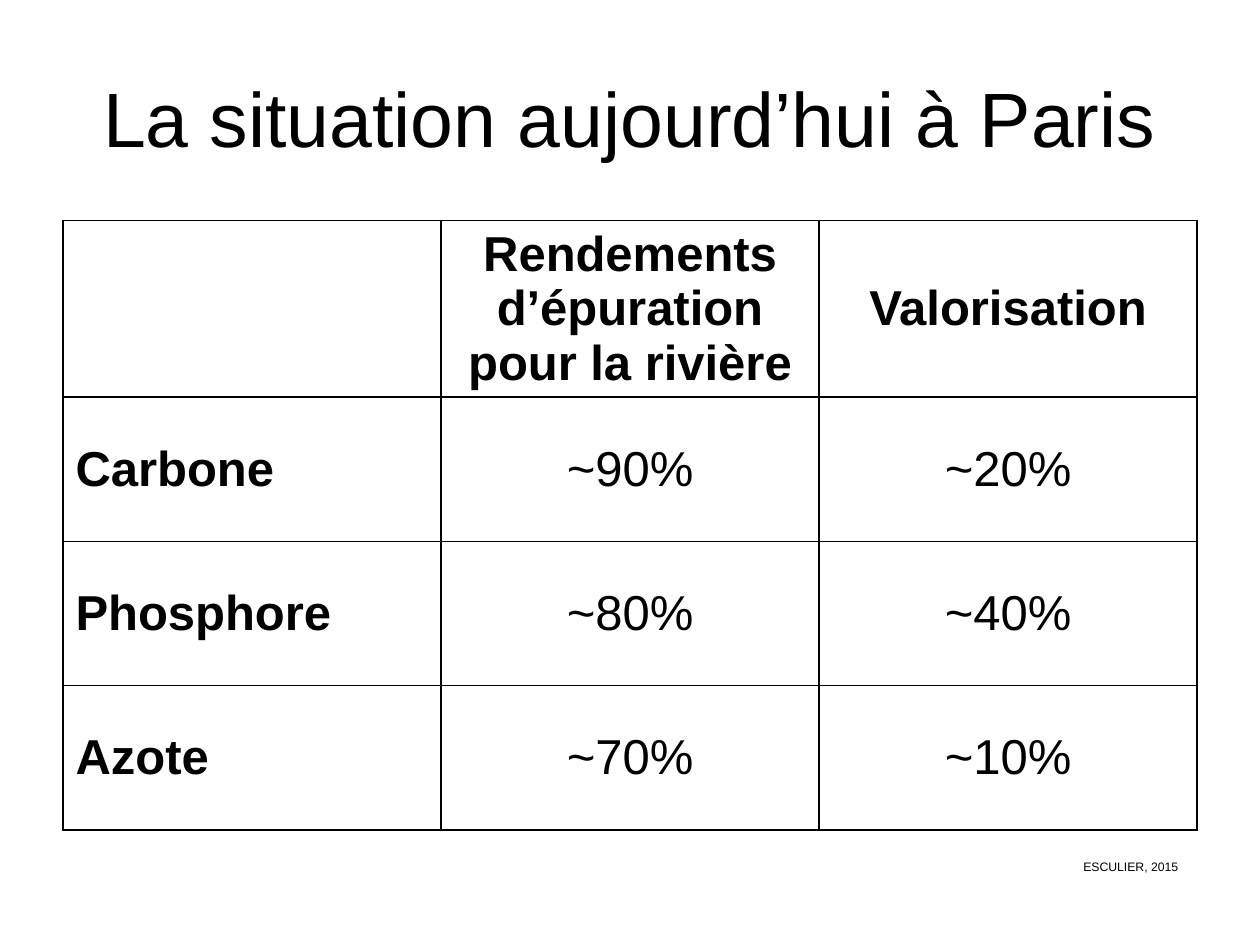
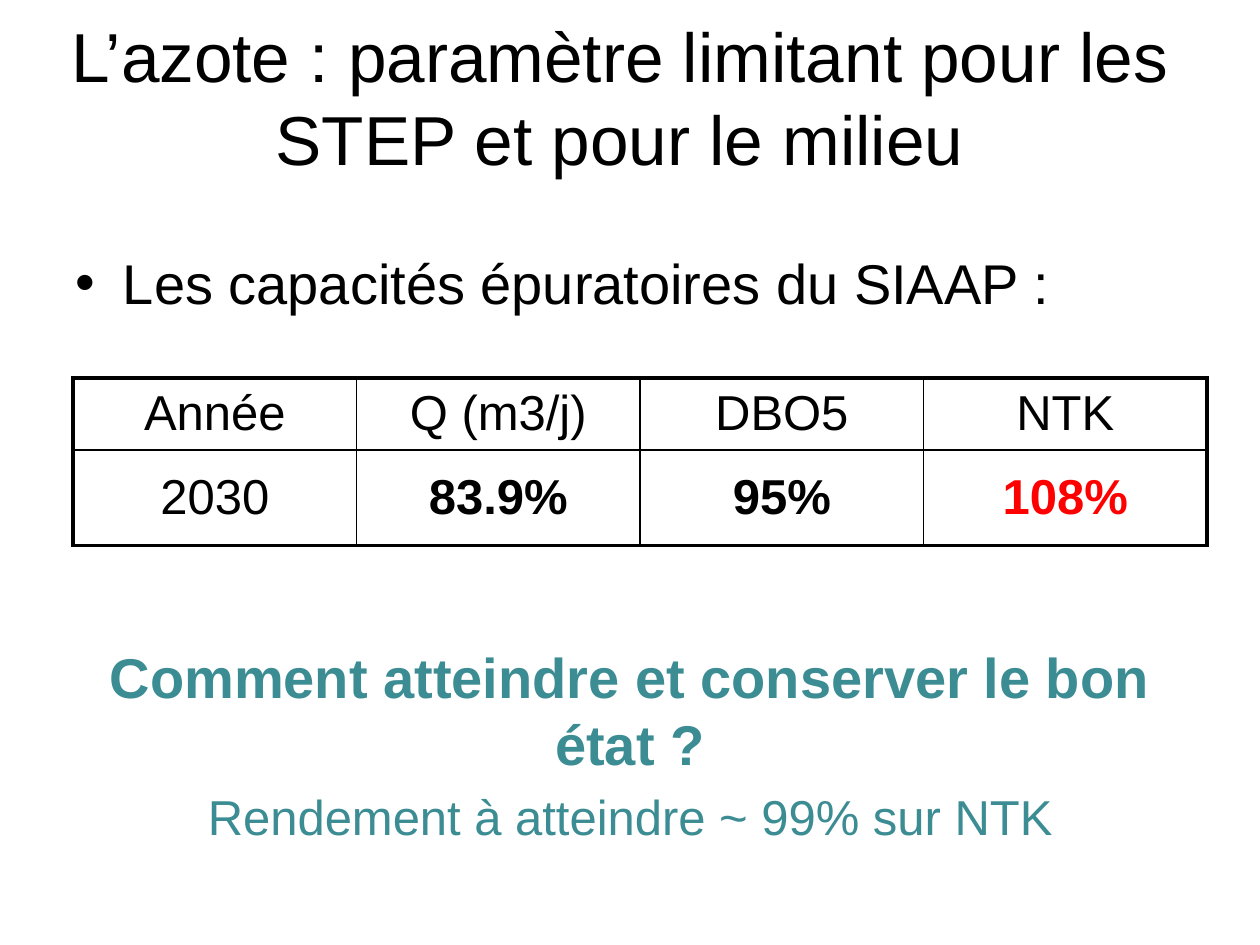
from lxml import etree
from pptx import Presentation
from pptx.dml.color import RGBColor
from pptx.enum.text import MSO_ANCHOR, MSO_AUTO_SIZE, PP_ALIGN
from pptx.oxml import ns
from pptx.util import Inches, Pt

FONT = "Arial"
BLACK, WHITE, TEAL, RED = "000000", "FFFFFF", "3C8C93", "FF0000"
LEFT, MID = PP_ALIGN.LEFT, PP_ALIGN.CENTER
THIN, THICK = 1, 2.25


def tint(code):
    return RGBColor.from_string(code)


def write(par, words, size=28, color=BLACK, bold=False, align=LEFT, before=None):
    par.alignment = align
    if before is not None:
        par.space_before = Pt(before)
    run = par.add_run()
    run.text = words
    font = run.font
    font.name, font.size, font.bold = FONT, Pt(size), bold
    font.color.rgb = tint(color)


def place(shape, box):
    shape.left, shape.top, shape.width, shape.height = map(Inches, box)


def title(slide, words, box, size):
    head = slide.shapes.title
    place(head, box)
    frame = head.text_frame
    frame.auto_size = MSO_AUTO_SIZE.NONE
    frame.vertical_anchor = MSO_ANCHOR.MIDDLE
    write(frame.paragraphs[0], words, size=size, align=MID)


def edge(cell, side, width):
    props = cell._tc.get_or_add_tcPr()
    line = etree.SubElement(props, ns.qn(f"a:ln{side}"), w=str(Pt(width)))
    fill = etree.SubElement(line, ns.qn("a:solidFill"))
    etree.SubElement(fill, ns.qn("a:srgbClr"), val=BLACK)


def grid(slide, rows, box, heights, style, frame=THIN):
    count, wide = len(rows), len(rows[0])
    table = slide.shapes.add_table(count, wide, *map(Inches, box)).table
    table.first_row = table.horz_banding = False
    for col in table.columns:
        col.width = Inches(box[2] / wide)
    for r, row in enumerate(rows):
        table.rows[r].height = Inches(heights[r])
        for c, words in enumerate(row):
            cell = table.cell(r, c)
            cell.vertical_anchor = MSO_ANCHOR.MIDDLE
            outer = {"L": c == 0, "R": c == wide - 1,
                     "T": r == 0, "B": r == count - 1}
            for side, rim in outer.items():
                edge(cell, side, frame if rim else THIN)
            cell.fill.solid()
            cell.fill.fore_color.rgb = tint(WHITE)
            if words:
                write(cell.text_frame.paragraphs[0], words, **style(r, c))


def source(slide, words, box):
    note = slide.shapes.add_textbox(*map(Inches, box))
    note.text_frame.word_wrap = True
    write(note.text_frame.paragraphs[0], words, size=7)


def plain(par):
    props = par._p.get_or_add_pPr()
    props.set("marL", "0")
    props.set("indent", "0")
    etree.SubElement(props, ns.qn("a:buNone"))


def body(slide, point, question, goal, box):
    shape = slide.placeholders[1]
    place(shape, box)
    frame = shape.text_frame
    frame.auto_size = MSO_AUTO_SIZE.NONE
    write(frame.paragraphs[0], point, size=32)
    for words, form in ((question, dict(size=32, bold=True, before=187)),
                        (goal, dict(size=28, before=5.6))):
        par = frame.add_paragraph()
        write(par, words, color=TEAL, align=MID, **form)
        plain(par)


def paris(deck):
    slide = deck.slides.add_slide(deck.slide_layouts[5])
    title(slide, "La situation aujourd’hui à Paris", (0.5, 0.3, 9, 1.25), 44)
    rows = [
        ("", "Rendements d’épuration pour la rivière", "Valorisation"),
        ("Carbone", "~90%", "~20%"),
        ("Phosphore", "~80%", "~40%"),
        ("Azote", "~70%", "~10%"),
    ]
    heights = [1.4] + [1.145] * 3
    grid(slide, rows, (0.5, 1.75, 9, sum(heights)), heights,
         lambda r, c: dict(bold=r == 0 or c == 0, align=MID if c else LEFT))
    source(slide, "ESCULIER, 2015", (8.5, 6.77, 1.17, 0.22))


def azote(deck):
    slide = deck.slides.add_slide(deck.slide_layouts[1])
    title(slide, "L’azote : paramètre limitant pour les STEP et pour le milieu",
          (0.42, 0.33, 9, 0.87), 39.6)
    body(slide, "Les capacités épuratoires du SIAAP :",
         "Comment atteindre et conserver le bon état ?",
         "Rendement à atteindre ~ 99% sur NTK", (0.5, 1.92, 9, 5.38))
    rows = [("Année", "Q (m3/j)", "DBO5", "NTK"),
            ("2030", "83.9%", "95%", "108%")]
    heights = [0.57, 0.76]
    grid(slide, rows, (0.58, 3, 9, sum(heights)), heights,
         lambda r, c: dict(bold=r > 0 and c > 0, align=MID,
                           color=RED if (r, c) == (1, 3) else BLACK),
         frame=THICK)


def main():
    deck = Presentation()
    deck.slide_width, deck.slide_height = Inches(10), Inches(7.5)
    paris(deck)
    azote(deck)
    deck.save("out.pptx")


if __name__ == "__main__":
    main()
